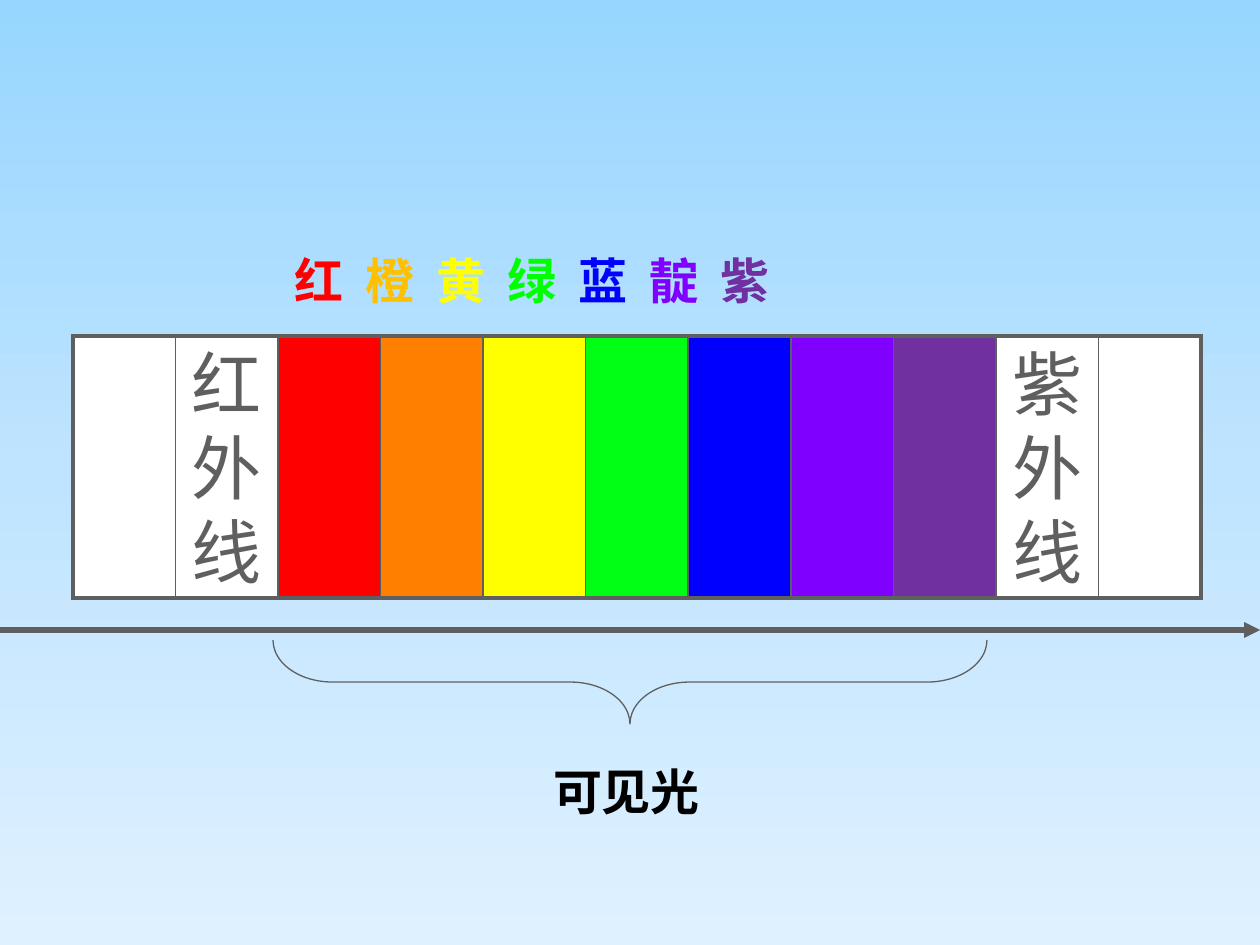
import copy

import pptx
import pptx.util
from lxml import etree
from pptx.dml.color import RGBColor
from pptx.enum.shapes import MSO_CONNECTOR, MSO_SHAPE
from pptx.enum.text import PP_ALIGN
from pptx.oxml.ns import qn

GREY = RGBColor(0x5F, 0x5F, 0x5F)
BLACK = RGBColor(0, 0, 0)
WHITE = RGBColor(0xFF, 0xFF, 0xFF)
RED = RGBColor(0xFF, 0, 0)
ORANGE = RGBColor(0xFF, 0x80, 0x01)
AMBER = RGBColor(0xFF, 0xC0, 0)
YELLOW = RGBColor(0xFF, 0xFF, 0)
LIME = RGBColor(0, 0xFF, 0x14)
GREEN = RGBColor(0, 0xFF, 0)
BLUE = RGBColor(0, 0, 0xFF)
INDIGO = RGBColor(0x80, 0, 0xFF)
VIOLET = RGBColor(0x70, 0x30, 0xA0)
SKY = [RGBColor(0x97, 0xD6, 0xFF), RGBColor(0xBF, 0xE4, 0xFF), RGBColor(0xDF, 0xF1, 0xFF)]

BANDS = [WHITE, WHITE, RED, ORANGE, YELLOW, LIME, BLUE, INDIGO, VIOLET, WHITE, WHITE]
NAMES = [("红", RED), ("橙", AMBER), ("黄", YELLOW), ("绿", GREEN),
         ("蓝", BLUE), ("靛", INDIGO), ("紫", VIOLET)]
NAME_PITCH = 71


def px(n):
    return pptx.util.Emu(round(n * 914400 / 126))


def set_background(s):
    """Fill the background with a vertical gradient of evenly spaced stops."""
    fill = s.background.fill
    fill.gradient()
    fill.gradient_angle = 270
    stops = next(s.element.iter(qn("a:gsLst")))
    stops.insert(1, copy.deepcopy(stops[0]))
    for i, (stop, color) in enumerate(zip(fill.gradient_stops, SKY)):
        stop.position = i / (len(SKY) - 1)
        stop.color.rgb = color


def add_run(p, text, size=28, color=BLACK, bold=False, font="Karla"):
    r = p.add_run()
    r.text = text
    r.font.size = pptx.util.Pt(size)
    r.font.bold = bold
    r.font.color.rgb = color
    r.font.name = font
    etree.SubElement(r.font._element, qn("a:ea"), typeface=font)


def add_text_box(s, x, y, w, h, align=PP_ALIGN.LEFT):
    """Add a wrapping text box and return its first paragraph."""
    tf = s.shapes.add_textbox(px(x), px(y), px(w), px(h)).text_frame
    tf.word_wrap = True
    tf.paragraphs[0].alignment = align
    return tf.paragraphs[0]


def set_border(cell, side, width):
    ln = etree.Element(qn("a:ln" + side), w=str(pptx.util.Pt(width)))
    fill = etree.SubElement(ln, qn("a:solidFill"))
    etree.SubElement(fill, qn("a:srgbClr"), val=str(GREY))
    return ln


def add_spectrum(s, x, y, w, h):
    n = len(BANDS)
    table = s.shapes.add_table(1, n, px(x), px(y), px(w), px(h)).table
    table.first_row = table.horz_banding = False
    for i, color in enumerate(BANDS):
        table.columns[i].width = px(w / n)
        cell = table.cell(0, i)
        cell.fill.solid()
        cell.fill.fore_color.rgb = color
        widths = {"L": 1 if i else 2.25, "R": 1 if i < n - 1 else 2.25, "T": 2.25, "B": 2.25}
        tc_pr = cell._tc.get_or_add_tcPr()
        for k, (side, width) in enumerate(widths.items()):
            tc_pr.insert(k, set_border(cell, side, width))


def add_color_names(s, x, y, w, h):
    p = add_text_box(s, x, y, w, h)
    tabs = etree.SubElement(p._p.get_or_add_pPr(), qn("a:tabLst"))
    for i, (name, color) in enumerate(NAMES):
        if i:
            etree.SubElement(tabs, qn("a:tab"), pos=str(px(i * NAME_PITCH)), algn="l")
        add_run(p, "\t" + name if i else name, color=color, bold=True, font="Noto Sans CJK SC")


def add_brace(s, x, y, w, h):
    sp = s.shapes.add_shape(MSO_SHAPE.LEFT_BRACE, px(x), px(y), px(w), px(h))
    sp.rotation = 270
    sp.adjustments[0] = 0.71
    sp.adjustments[1] = 0.5
    sp.fill.background()
    sp.line.color.rgb = GREY
    sp.line.width = pptx.util.Pt(0.75)
    sp.shadow.inherit = False


def add_arrow(s, x1, y1, x2, y2):
    c = s.shapes.add_connector(MSO_CONNECTOR.STRAIGHT, px(x1), px(y1), px(x2), px(y2))
    c.line.color.rgb = GREY
    c.line.width = pptx.util.Pt(3)
    etree.SubElement(c.line._get_or_add_ln(), qn("a:tailEnd"), type="triangle")
    etree.SubElement(c._element.spPr, qn("a:effectLst"))


def main():
    prs = pptx.Presentation()
    prs.slide_width, prs.slide_height = px(1260), px(945)
    s = prs.slides.add_slide(prs.slide_layouts[6])
    set_background(s)
    add_spectrum(s, 73, 336, 1128, 262)
    for x, label in [(179, "红外线"), (1000, "紫外线")]:
        add_run(add_text_box(s, x, 334, 95, 265), label, size=40, color=GREY)
    add_brace(s, 588, 325, 84, 714)
    add_run(add_text_box(s, 469, 755, 315, 72, PP_ALIGN.CENTER), "可见光", bold=True)
    add_arrow(s, 0, 630, 1260, 630)
    add_color_names(s, 282, 244, 753, 72)
    prs.save("out.pptx")


if __name__ == "__main__":
    main()
